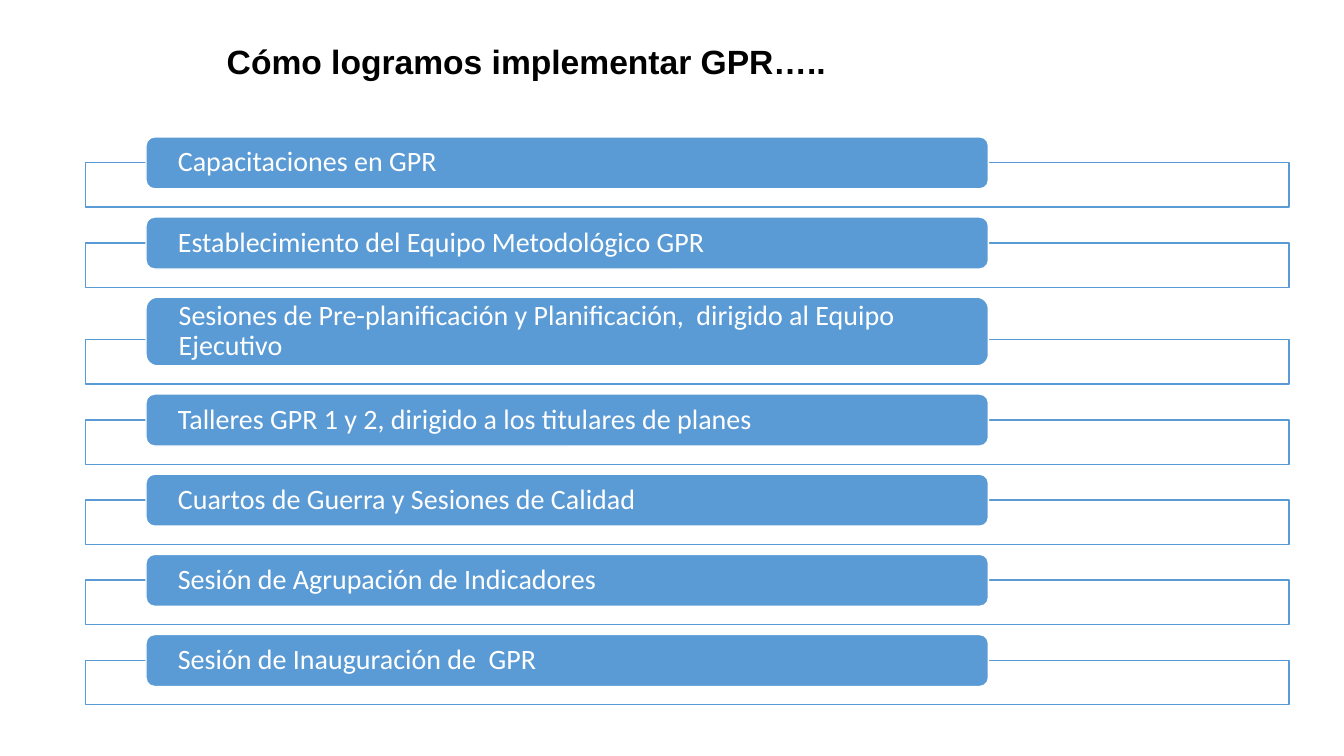
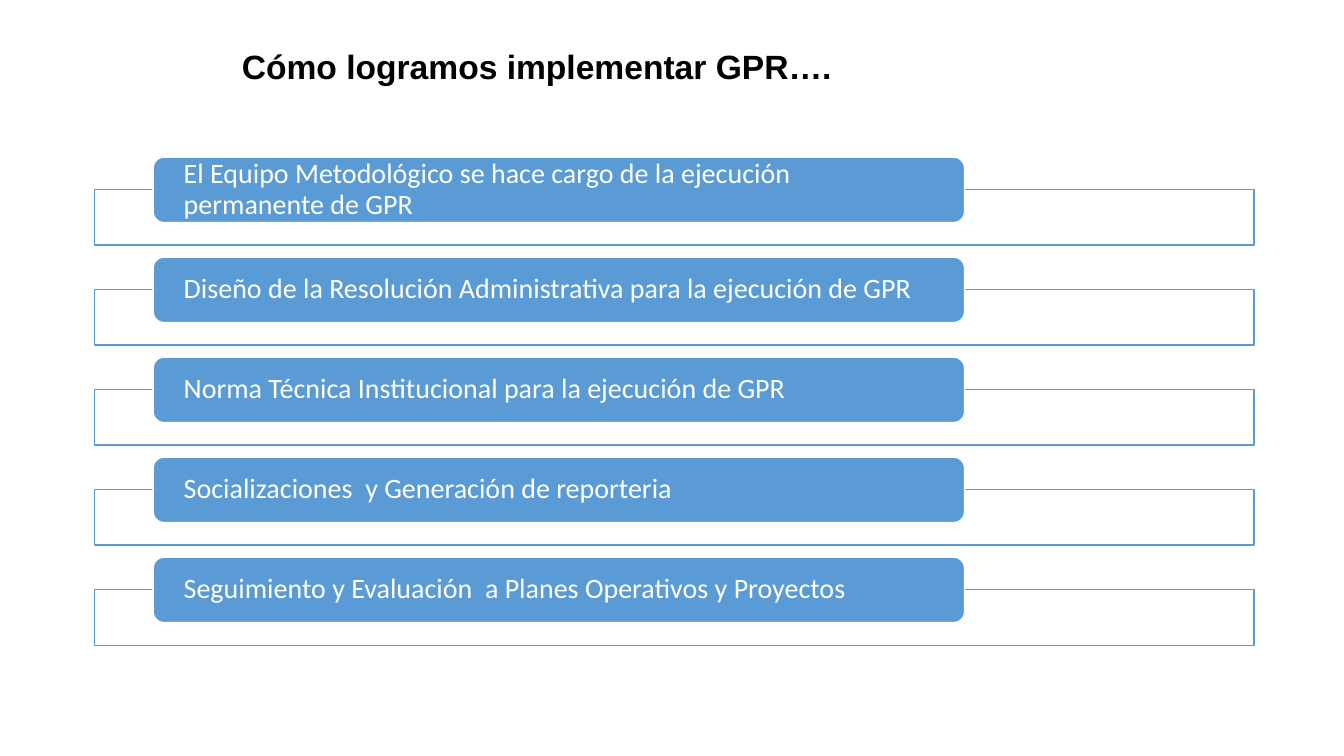
from dataclasses import dataclass

from lxml import etree
from pptx import Presentation
from pptx.dml.color import RGBColor
from pptx.enum.shapes import MSO_SHAPE
from pptx.enum.text import MSO_ANCHOR, PP_ALIGN
from pptx.oxml.ns import qn
from pptx.util import Cm, Pt

RECTANGLE = MSO_SHAPE.RECTANGLE
ROUNDED = MSO_SHAPE.ROUNDED_RECTANGLE
MIDDLE = MSO_ANCHOR.MIDDLE
LEFT = PP_ALIGN.LEFT

BLACK = RGBColor(0x00, 0x00, 0x00)
WHITE = RGBColor(0xFF, 0xFF, 0xFF)
BLUE = RGBColor(0x5B, 0x9B, 0xD5)

TITLE_ONLY = 5
FRAME_OPACITY = 90


@dataclass(frozen=True)
class Step:
    text: str
    extra_height: float = 0  # cm added to the label for a second line


@dataclass(frozen=True)
class StepList:
    """Title and steps of one slide; all lengths in centimetres."""
    title: str
    title_left: float
    title_top: float
    top: float
    frame_left: float
    frame_width: float
    frame_height: float
    label_left: float
    label_width: float
    label_height: float
    overlap: float  # how far a label reaches down into its frame
    gap: float
    inset: float
    steps: tuple[Step, ...]


STEP_LISTS = (
    StepList(
        title="Cómo logramos implementar GPR…..", title_left=5.46, title_top=0.25,
        top=3.45, frame_left=2.16, frame_width=30.33, frame_height=1.12,
        label_left=3.68, label_width=21.23, label_height=1.31,
        overlap=0.66, gap=0.25, inset=0.74,
        steps=(
            Step("Capacitaciones en GPR"),
            Step("Establecimiento del Equipo Metodológico GPR"),
            Step("Sesiones de Pre-planificación y Planificación,  dirigido al Equipo Ejecutivo",
                 extra_height=0.42),
            Step("Talleres GPR 1 y 2, dirigido a los titulares de planes"),
            Step("Cuartos de Guerra y Sesiones de Calidad"),
            Step("Sesión de Agrupación de Indicadores"),
            Step("Sesión de Inauguración de  GPR"),
        ),
    ),
    StepList(
        title="Cómo logramos implementar GPR….", title_left=5.84, title_top=0.38,
        top=3.96, frame_left=2.39, frame_width=29.21, frame_height=1.4,
        label_left=3.86, label_width=20.45, label_height=1.65,
        overlap=0.83, gap=0.3, inset=0.69,
        steps=(
            Step("El Equipo Metodológico se hace cargo de la ejecución permanente de GPR"),
            Step("Diseño de la Resolución Administrativa para la ejecución de GPR"),
            Step("Norma Técnica Institucional para la ejecución de GPR"),
            Step("Socializaciones  y Generación de reporteria"),
            Step("Seguimiento y Evaluación  a Planes Operativos y Proyectos"),
        ),
    ),
)


def write_text(shape, text: str, *, font: str, size: int, color: RGBColor,
               bold: bool = False) -> None:
    """Fill a shape with one left-aligned, vertically centred paragraph."""
    frame = shape.text_frame
    frame.word_wrap = True
    frame.vertical_anchor = MIDDLE
    paragraph = frame.paragraphs[0]
    paragraph.alignment = LEFT
    paragraph.line_spacing = 0.9
    run = paragraph.add_run()
    run.text = text
    run.font.name = font
    run.font.size = Pt(size)
    run.font.bold = bold
    run.font.color.rgb = color


def add_box(slide, kind, left: float, top: float, width: float, height: float,
            *, fill: RGBColor, line: RGBColor):
    shape = slide.shapes.add_shape(kind, Cm(left), Cm(top), Cm(width), Cm(height))
    shape.shadow.inherit = False
    shape.fill.solid()
    shape.fill.fore_color.rgb = fill
    shape.line.color.rgb = line
    shape.line.width = Pt(1)
    return shape


def set_opacity(shape, percent: int) -> None:
    color = shape._element.spPr.find(qn("a:solidFill")).find(qn("a:srgbClr"))
    etree.SubElement(color, qn("a:alpha")).set("val", str(percent * 1000))


def add_title(slide, content: StepList) -> None:
    title = slide.shapes.title
    title.left, title.top = Cm(content.title_left), Cm(content.title_top)
    title.width, title.height = Cm(29.21), Cm(2.69)
    write_text(title, content.title, font="Arial", size=24, color=BLACK, bold=True)


def add_step(slide, content: StepList, step: Step, top: float) -> float:
    """Draw a frame with its label and return the bottom of the frame."""
    label_height = content.label_height + step.extra_height
    frame_top = top + label_height - content.overlap
    frame = add_box(slide, RECTANGLE, content.frame_left, frame_top,
                    content.frame_width, content.frame_height, fill=WHITE, line=BLUE)
    set_opacity(frame, FRAME_OPACITY)
    label = add_box(slide, ROUNDED, content.label_left, top,
                    content.label_width, label_height, fill=BLUE, line=WHITE)
    label.text_frame.margin_left = label.text_frame.margin_right = Cm(content.inset)
    label.text_frame.margin_top = label.text_frame.margin_bottom = 0
    write_text(label, step.text, font="Calibri", size=20, color=WHITE)
    return frame_top + content.frame_height


def add_step_slide(presentation, content: StepList) -> None:
    slide = presentation.slides.add_slide(presentation.slide_layouts[TITLE_ONLY])
    add_title(slide, content)
    top = content.top
    for step in content.steps:
        top = add_step(slide, content, step, top) + content.gap


def main() -> None:
    presentation = Presentation()
    presentation.slide_width = Cm(33.87)
    presentation.slide_height = Cm(19.05)
    for content in STEP_LISTS:
        add_step_slide(presentation, content)
    presentation.save("out.pptx")


if __name__ == "__main__":
    main()
